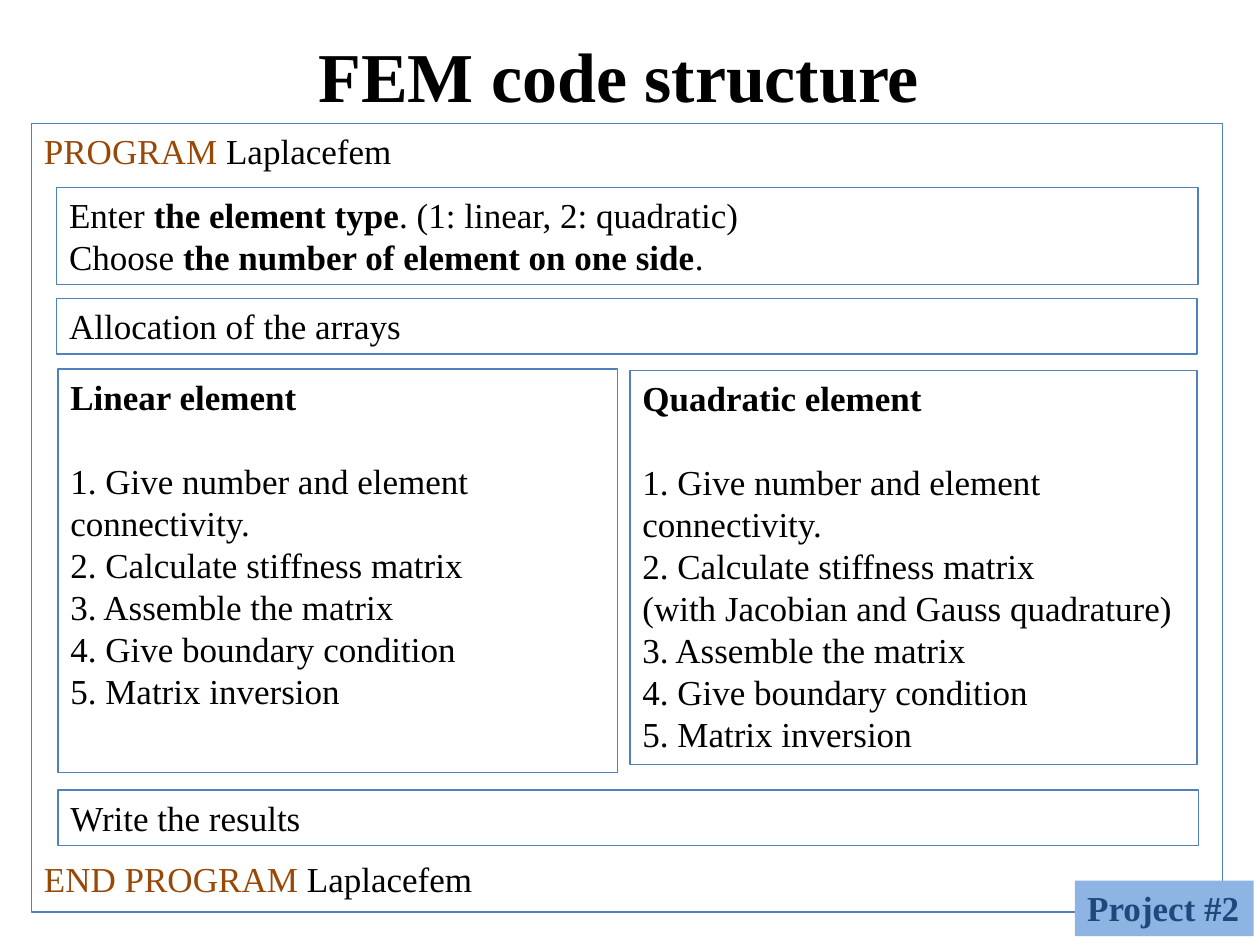
import dataclasses

import pptx
import pptx.dml.color
import pptx.enum.shapes
import pptx.enum.text
import pptx.util

Inches = pptx.util.Inches
Pt = pptx.util.Pt


def rgb(code):
    return pptx.dml.color.RGBColor.from_string(code)


@dataclasses.dataclass(frozen=True)
class Theme:
    font: str = "Times New Roman"
    ink: str = "000000"
    key: str = "984807"
    edge: str = "4F81BD"
    tag: str = "8EB4E3"
    navy: str = "1F497D"
    body: int = 20
    head: int = 40
    lead: int = 24


THEME = Theme()


def style(run, color=THEME.ink, size=THEME.body, bold=False):
    font = run.font
    font.name = THEME.font
    font.size = Pt(size)
    font.bold = bold
    font.color.rgb = rgb(color)


def write(frame, lines, gaps):
    """Each line is a list of (text, style) parts; gaps maps line to space before."""
    for num, parts in enumerate(lines):
        para = frame.paragraphs[0] if num == 0 else frame.add_paragraph()
        para.alignment = pptx.enum.text.PP_ALIGN.LEFT
        para.line_spacing = Pt(THEME.lead)
        para.space_before = Pt(gaps.get(num, 0))
        for text, look in parts:
            run = para.add_run()
            run.text = text
            style(run, **look)


def add_box(slide, area, lines, gaps=None, fill=None):
    kind = pptx.enum.shapes.MSO_SHAPE.RECTANGLE
    box = slide.shapes.add_shape(kind, *map(Inches, area))
    box.shadow.inherit = False
    if fill:
        box.fill.solid()
        box.fill.fore_color.rgb = rgb(fill)
        box.line.fill.background()
    else:
        box.fill.background()
        box.line.color.rgb = rgb(THEME.edge)
        box.line.width = Pt(0.75)
    frame = box.text_frame
    frame.word_wrap = not fill
    frame.vertical_anchor = pptx.enum.text.MSO_ANCHOR.TOP
    write(frame, lines, gaps or {})


def add_title(slide, text):
    title = slide.shapes.title
    title.left, title.top = Inches(-0.02), Inches(0.21)
    title.width, title.height = Inches(10), Inches(0.77)
    frame = title.text_frame
    frame.text = text
    frame.vertical_anchor = pptx.enum.text.MSO_ANCHOR.TOP
    frame.paragraphs[0].alignment = pptx.enum.text.PP_ALIGN.CENTER
    style(frame.paragraphs[0].runs[0], size=THEME.head, bold=True)


def add_steps(slide, area, head, notes=()):
    steps = [
        "1. Give number and element connectivity.",
        "2. Calculate stiffness matrix",
        *notes,
        "3. Assemble the matrix",
        "4. Give boundary condition",
        "5. Matrix inversion",
    ]
    lines = [[(head, BOLD)]] + [[(step, PLAIN)] for step in steps]
    add_box(slide, area, lines, {1: THEME.lead})


PLAIN = {}
BOLD = {"bold": True}
KEY = {"color": THEME.key}


def main():
    deck = pptx.Presentation()
    deck.slide_width, deck.slide_height = Inches(10), Inches(7.5)
    slide = deck.slides.add_slide(deck.slide_layouts[5])

    # Program frame, with room for the stages between its two lines
    name = ("Laplacefem", PLAIN)
    add_box(slide, (0.25, 0.98, 9.45, 6.26),
            [[("PROGRAM ", KEY), name], [("END PROGRAM ", KEY), name]],
            {1: 392})

    # Input and allocation
    add_box(slide, (0.45, 1.49, 9.06, 0.77), [
        [("Enter ", PLAIN), ("the element type", BOLD),
         (". (1: linear, 2: quadratic)", PLAIN)],
        [("Choose ", PLAIN), ("the number of element on one side", BOLD),
         (".", PLAIN)],
    ])
    add_box(slide, (0.45, 2.37, 9.05, 0.44),
            [[("Allocation of the arrays", PLAIN)]])

    add_title(slide, "FEM code structure ")

    # Solver branches
    add_steps(slide, (0.46, 2.93, 4.44, 3.2), "Linear element")
    add_steps(slide, (5, 2.94, 4.5, 3.13), "Quadratic element",
              ["(with Jacobian and Gauss quadrature)"])

    # Project tag and output
    add_box(slide, (8.53, 6.99, 1.42, 0.44),
            [[("Project #2", {"color": THEME.navy, "bold": True})]],
            fill=THEME.tag)
    add_box(slide, (0.46, 6.27, 9.05, 0.44),
            [[("Write the results", PLAIN)]])

    deck.save("out.pptx")


if __name__ == "__main__":
    main()
